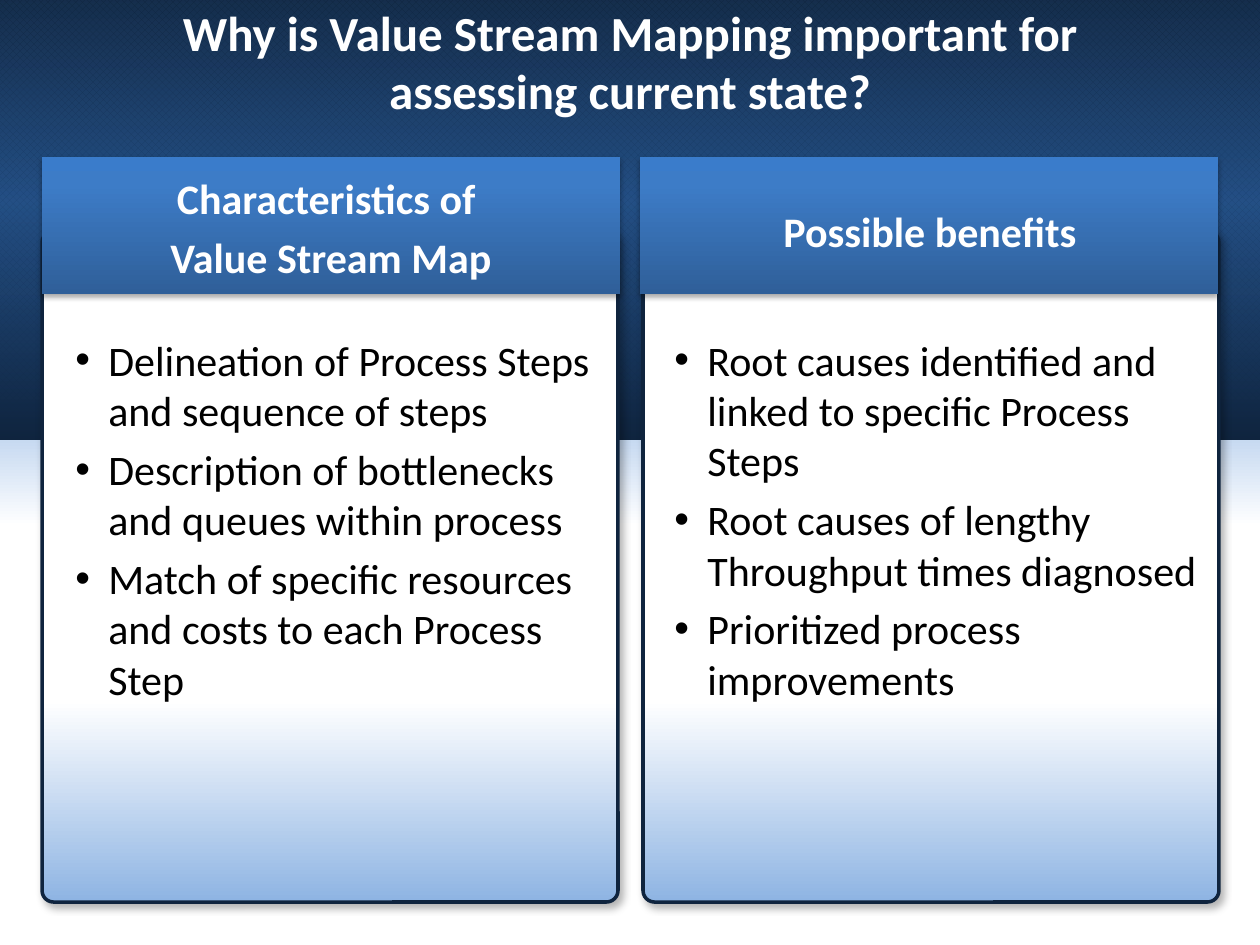
from lxml.etree import SubElement
from pptx import Presentation
from pptx.dml.color import RGBColor
from pptx.enum.dml import MSO_PATTERN
from pptx.enum.shapes import MSO_SHAPE
from pptx.enum.text import MSO_ANCHOR, PP_ALIGN
from pptx.oxml.ns import qn
from pptx.util import Emu, Pt

PX = 914400 / 126
FONT = "Calibri"
COLORS = {
    "navy": "0F243E", "deep": "1F497D", "sky": "558ED5", "pale": "8EB4E3",
    "white": "FFFFFF", "black": "000000",
    "head_low": "2F5F99", "head_mid": "3D7CC7", "head_top": "3A7CCB",
}
CARD_STOPS = [(70, "white"), (100, "pale")]
HEAD_STOPS = [(0, "head_low"), (80, "head_mid"), (100, "head_top")]
COLUMNS = [
    {
        "card": 42, "head": 42, "body": 63, "label": (42, 158, 578, 130),
        "title": ["Characteristics of ", "Value Stream Map"],
        "points": [
            "Delineation of Process Steps and sequence of steps",
            "Description of bottlenecks and queues within process",
            "Match of specific resources and costs to each Process Step",
        ],
    },
    {
        "card": 643, "head": 640, "body": 662, "label": (662, 174, 536, 88),
        "title": ["Possible benefits"],
        "points": [
            "Root causes identified and linked to specific Process Steps",
            "Root causes of lengthy Throughput times diagnosed",
            "Prioritized process improvements",
        ],
    },
]


def px(n):
    """Turn pixels into EMU."""
    return Emu(round(n * PX))


def rgb(name):
    """Look up a named colour."""
    return RGBColor.from_string(COLORS[name])


def add_color(parent, name, alpha):
    """Append a colour element with an opacity in percent."""
    clr = SubElement(parent, qn("a:srgbClr"), val=COLORS[name])
    if alpha < 100:
        SubElement(clr, qn("a:alpha"), val=str(alpha * 1000))


def add_box(slide, box, kind=MSO_SHAPE.RECTANGLE):
    """Add a shape without line or shadow."""
    sp = slide.shapes.add_shape(kind, *map(px, box))
    sp.shadow.inherit = False
    sp.line.fill.background()
    return sp


def set_gradient(sp, stops, angle=90, alpha=100):
    """Fill a shape with a linear gradient, its angle clockwise."""
    sp.fill.gradient()
    grad = sp._element.spPr.find(qn("a:gradFill"))
    gs_list = grad.find(qn("a:gsLst"))
    for gs in list(gs_list):
        gs_list.remove(gs)
    for i, (pos, name) in enumerate(stops):
        gs = SubElement(gs_list, qn("a:gs"), pos=str(pos * 1000))
        add_color(gs, name, 100 if i == len(stops) - 1 else alpha)
    grad.find(qn("a:lin")).set("ang", str(angle * 60000))


def set_shadow(sp, alpha, blur, dist, angle):
    """Give a shape an outer black shadow."""
    effects = sp._element.spPr.find(qn("a:effectLst"))
    shadow = SubElement(
        effects, qn("a:outerShdw"), blurRad=str(Pt(blur)), dist=str(Pt(dist)),
        dir=str(angle * 60000), algn="t", rotWithShape="0")
    add_color(shadow, "black", alpha)


def set_bullet(p):
    """Give a paragraph a hanging bullet."""
    pPr = p._p.get_or_add_pPr()
    pPr.set("marL", str(px(33)))
    pPr.set("indent", str(-px(33)))
    SubElement(pPr, qn("a:buFont"), typeface="Arial")
    SubElement(pPr, qn("a:buChar"), char="•")


def add_text(slide, box, lines, size=24, heading=True):
    """Add a centred white heading or a black bullet list."""
    tf = slide.shapes.add_textbox(*map(px, box)).text_frame
    tf.word_wrap = True
    tf.vertical_anchor = MSO_ANCHOR.BOTTOM if heading else MSO_ANCHOR.TOP
    for i, line in enumerate(lines):
        p = tf.add_paragraph() if i else tf.paragraphs[0]
        if i:
            p.space_before = Pt(4.8)
        if heading:
            p.alignment = PP_ALIGN.CENTER
        else:
            set_bullet(p)
        r = p.add_run()
        r.text = line
        r.font.name = FONT
        r.font.size = Pt(size)
        r.font.bold = heading
        r.font.color.rgb = rgb("white" if heading else "black")


def add_backdrop(slide):
    """Draw the pale lower field and the patterned dark band."""
    set_gradient(add_box(slide, (-1, 357, 1264, 583)),
                 [(0, "pale"), (29, "white"), (100, "white")])
    band = (-4, -1, 1265, 441)
    sp = add_box(slide, band)
    sp.fill.patterned()
    sp.fill.pattern = MSO_PATTERN.OUTLINED_DIAMOND
    sp.fill.fore_color.rgb = rgb("navy")
    sp.fill.back_color.rgb = rgb("sky")
    set_gradient(add_box(slide, band),
                 [(0, "navy"), (46, "deep"), (100, "navy")], alpha=90)


def add_card(slide, left):
    """Draw the rounded panel of a column."""
    sp = add_box(slide, (left, 231, 576, 671), MSO_SHAPE.ROUNDED_RECTANGLE)
    sp.adjustments[0] = 0.02
    set_gradient(sp, CARD_STOPS)
    sp.line.color.rgb = rgb("navy")
    sp.line.width = Pt(2)
    set_shadow(sp, 30, 4.5, 2.6, 53)


def add_header(slide, left):
    """Draw the header bar of a column."""
    sp = add_box(slide, (left, 157, 578, 137))
    set_gradient(sp, HEAD_STOPS, angle=270)
    set_shadow(sp, 35, 3.1, 1.8, 90)


def main():
    """Build the slide and save it."""
    prs = Presentation()
    prs.slide_width, prs.slide_height = px(1260), px(945)
    slide = prs.slides.add_slide(prs.slide_layouts[6])
    add_backdrop(slide)
    for col in COLUMNS:
        add_card(slide, col["card"])
        add_header(slide, col["head"])
    add_text(slide, (84, -5, 1092, 131),
             ["Why is Value Stream Mapping important for assessing current state?"],
             size=28)
    for col in COLUMNS:
        add_text(slide, col["label"], col["title"])
        add_text(slide, (col["body"], 328, 557, 544), col["points"], heading=False)
    prs.save("out.pptx")


if __name__ == "__main__":
    main()
